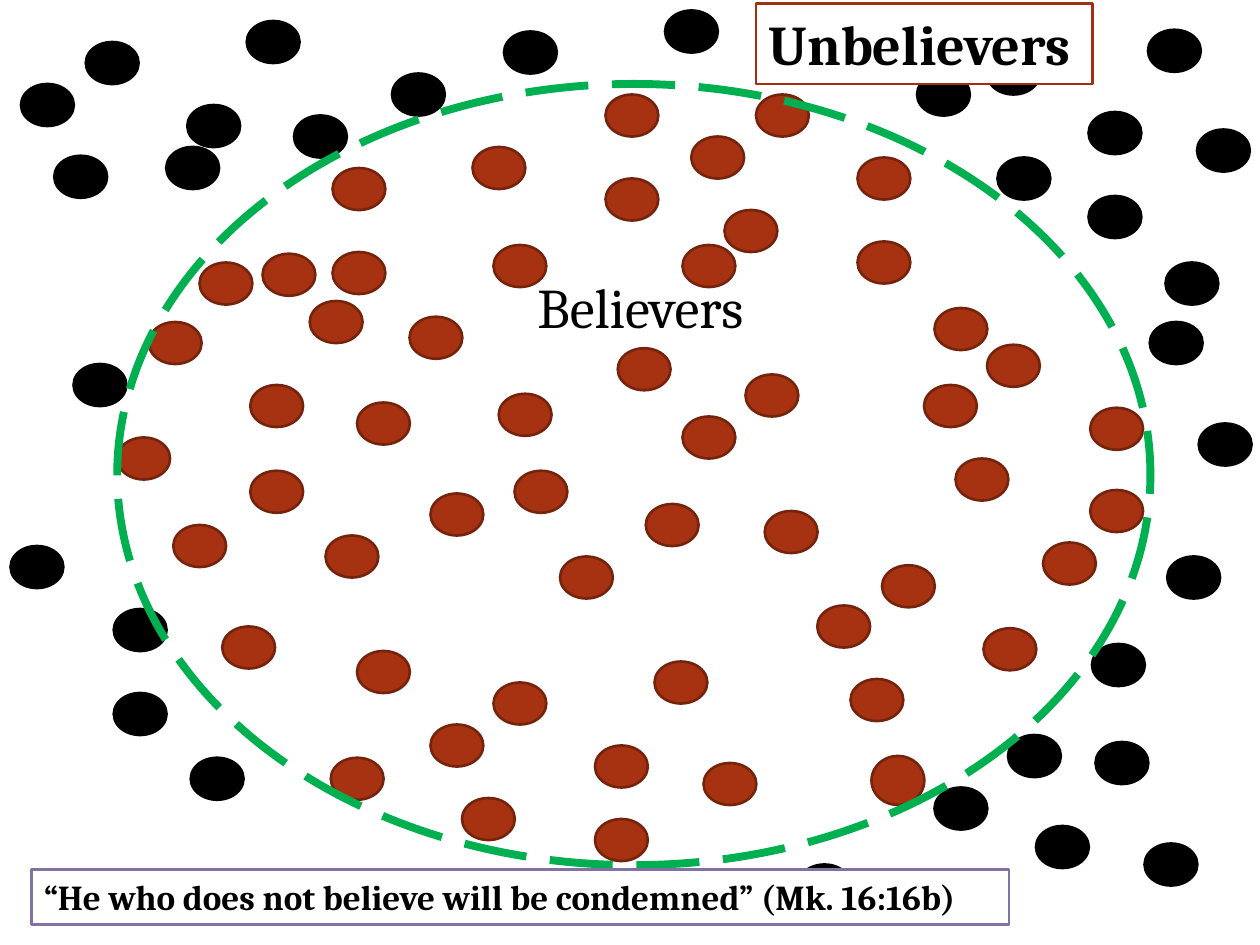
from pptx import Presentation
from pptx.dml.color import RGBColor
from pptx.enum.dml import MSO_LINE_DASH_STYLE as Dash
from pptx.enum.shapes import MSO_SHAPE as Shape
from pptx.enum.text import MSO_AUTO_SIZE as AutoSize
from pptx.util import Pt

COLORS = {
    "believer": "A63212", "believer_edge": "75230C", "unbeliever": "000000",
    "circle": "00B050", "label_edge": "9F3011", "verse_edge": "8371A4",
    "paper": "FFFFFF", "text": "000000",
}
FONT = "Cambria"
DOT_WIDTH, DOT_HEIGHT = 30.2, 24

# Left and top of each dot
BELIEVERS = [
    (432, 54), (490, 90), (395, 78), (414, 120), (490, 138), (534, 176),
    (85, 184), (143, 220), (177, 172), (67, 250), (143, 269), (186, 306),
    (204, 230), (294, 269), (190, 96), (114, 150), (190, 144), (234, 181),
    (282, 140), (204, 372), (99, 300), (189, 433), (127, 358), (346, 54),
    (437, 292), (270, 84), (346, 102), (390, 140), (353, 199), (282, 390),
    (340, 426), (246, 414), (374, 378), (264, 456), (340, 468), (369, 288),
    (402, 436), (564, 197), (623, 233), (528, 220), (546, 262), (623, 280),
    (504, 323), (562, 359), (467, 346), (596, 310), (486, 388), (320, 318),
    (285, 225), (150, 145), (426, 214), (390, 238), (246, 282),
]
TALL_BELIEVER = (498, 432)
UNBELIEVERS = [
    (524, 42), (570, 90), (42, 208), (95, 84), (224, 42), (6, 312),
    (65, 348), (65, 396), (109, 433), (288, 18), (380, 6), (657, 184),
    (667, 318), (685, 242), (576, 420), (456, 494), (624, 368), (534, 450),
    (592, 472), (626, 424), (654, 482), (49, 24), (107, 60), (12, 48),
    (141, 12), (31, 89), (168, 66), (564, 30), (622, 64), (656, 17),
    (622, 112), (666, 150), (684, 74),
]


def color(name):
    return RGBColor.from_string(COLORS[name])


def write(para, text, size=32, bold=False):
    span = para.add_run()
    span.text = text
    span.font.name = FONT
    span.font.size = Pt(size)
    span.font.bold = bold
    span.font.color.rgb = color("text")


class Painter:
    def __init__(self, page):
        self.page = page

    def style(self, shape, fill, edge, weight=1.5):
        if fill:
            shape.fill.solid()
            shape.fill.fore_color.rgb = color(fill)
        else:
            shape.fill.background()
        if edge:
            shape.line.color.rgb = color(edge)
            shape.line.width = Pt(weight)

    def ellipse(self, left, top, width, height, fill, edge, weight=1.5):
        oval = self.page.shapes.add_shape(
            Shape.OVAL, Pt(left), Pt(top), Pt(width), Pt(height))
        oval.shadow.inherit = False
        self.style(oval, fill, edge, weight)
        return oval

    def dot(self, left, top, fill, edge, height=DOT_HEIGHT):
        return self.ellipse(left, top, DOT_WIDTH, height, fill, edge)

    def label(self, text, left, top, width, height, fill=None, edge=None, **form):
        box = self.page.shapes.add_textbox(
            Pt(left), Pt(top), Pt(width), Pt(height))
        self.style(box, fill, edge)
        box.text_frame.word_wrap = False
        box.text_frame.auto_size = AutoSize.SHAPE_TO_FIT_TEXT
        write(box.text_frame.paragraphs[0], text, **form)


def main():
    deck = Presentation()
    deck.slide_width, deck.slide_height = Pt(720), Pt(540)
    painter = Painter(deck.slides.add_slide(deck.slide_layouts[6]))

    # People inside and outside the circle
    for left, top in UNBELIEVERS:
        painter.dot(left, top, "unbeliever", "unbeliever")
    for left, top in BELIEVERS:
        painter.dot(left, top, "believer", "believer_edge")
    painter.dot(*TALL_BELIEVER, "believer", "believer_edge", height=28)

    # Dashed circle around the believers
    circle = painter.ellipse(67, 48, 590.4, 446.4, None, "circle", weight=4.5)
    circle.line.dash_style = Dash.LONG_DASH

    # Labels and verse
    painter.label("Believers", 300, 152, 142, 46)
    painter.label("“He who does not believe will be condemned” (Mk. 16:16b)",
                  18, 497, 558.7, 31.5, "paper", "verse_edge", size=20, bold=True)
    painter.label("Unbelievers", 432, 2, 192.2, 46,
                  "paper", "label_edge", bold=True)

    deck.save("out.pptx")


if __name__ == "__main__":
    main()
